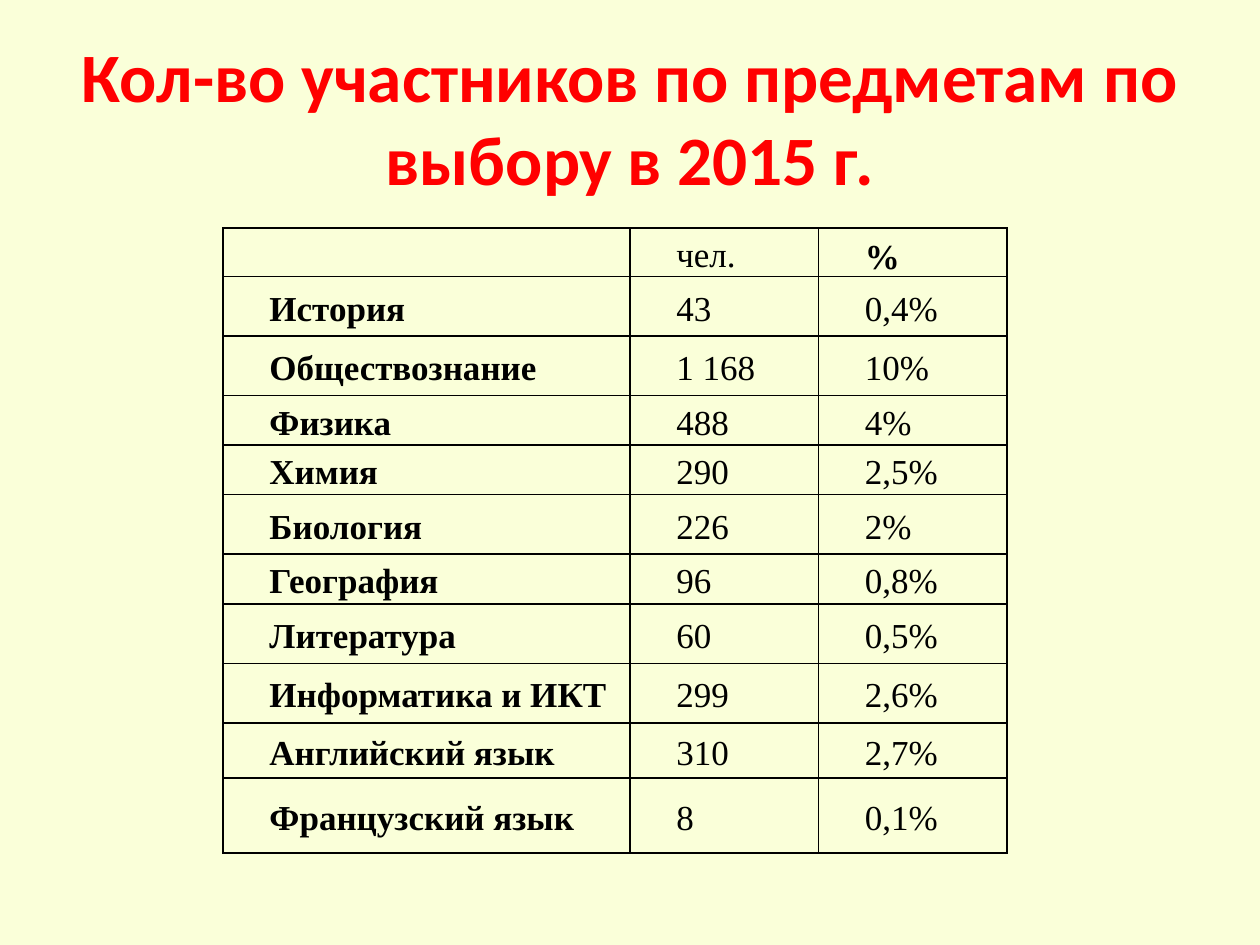
"""Builds a slide with a table of exam participants by elective subject."""
from lxml.etree import SubElement, Element
from pptx import Presentation
from pptx.dml.color import RGBColor
from pptx.enum.text import MSO_ANCHOR as Anchor, PP_ALIGN as Align
from pptx.oxml.ns import qn
from pptx.util import Pt

CREAM = RGBColor(0xFA, 0xFF, 0xD9)
RED = RGBColor(0xFF, 0x00, 0x00)
BLACK = RGBColor(0x00, 0x00, 0x00)

TITLE = "Кол-во участников по предметам по выбору в 2015 г."
COLUMN_WIDTHS = (232.5, 107.75, 107.75)
ROWS = (
    (21.6, "", "чел.", "%"),
    (34, "История", "43", "0,4%"),
    (34, "Обществознание", "1 168", "10%"),
    (28.35, "Физика", "488", "4%"),
    (28.35, "Химия", "290", "2,5%"),
    (34, "Биология", "226", "2%"),
    (28.35, "География", "96", "0,8%"),
    (34, "Литература", "60", "0,5%"),
    (34, "Информатика и ИКТ", "299", "2,6%"),
    (31.5, "Английский язык", "310", "2,7%"),
    (43, "Французский язык", "8", "0,1%"),
)


def set_font(paragraph, name, size, color, bold):
    font = paragraph.font
    font.name, font.size, font.bold = name, Pt(size), bold
    font.color.rgb = color


def add_title(slide):
    frame = slide.shapes.add_textbox(Pt(36), Pt(21.6), Pt(648), Pt(90)).text_frame
    frame.word_wrap = True
    frame.vertical_anchor = Anchor.MIDDLE
    paragraph = frame.paragraphs[0]
    paragraph.text = TITLE
    paragraph.alignment = Align.CENTER
    set_font(paragraph, "Calibri", 39.6, RED, True)


def add_borders(cell):
    properties = cell._tc.get_or_add_tcPr()
    for index, side in enumerate(("lnL", "lnR", "lnT", "lnB")):
        line = Element(qn(f"a:{side}"), w=str(Pt(1)))
        fill = SubElement(line, qn("a:solidFill"))
        SubElement(fill, qn("a:srgbClr"), val=str(BLACK))
        properties.insert(index, line)


def format_cell(cell, text, bold, filled, anchor):
    cell.margin_left = cell.margin_right = Pt(5)
    cell.margin_top = cell.margin_bottom = Pt(0)
    cell.vertical_anchor = anchor
    if filled:
        cell.fill.solid()
        cell.fill.fore_color.rgb = CREAM
    else:
        cell.fill.background()
    add_borders(cell)
    paragraph = cell.text_frame.paragraphs[0]
    paragraph.text = text
    paragraph.alignment = Align.JUSTIFY
    paragraph.line_spacing = 1.15
    paragraph._p.get_or_add_pPr().set("indent", str(Pt(21.6)))
    set_font(paragraph, "Times New Roman", 20, BLACK, bold)


def add_participants_table(slide):
    height = sum(row[0] for row in ROWS)
    table = slide.shapes.add_table(
        len(ROWS), len(COLUMN_WIDTHS), Pt(127.4), Pt(130.4),
        Pt(sum(COLUMN_WIDTHS)), Pt(height)).table
    table.first_row = table.horz_banding = False
    for column, width in zip(table.columns, COLUMN_WIDTHS):
        column.width = Pt(width)
    for row_index, (row_height, *texts) in enumerate(ROWS):
        table.rows[row_index].height = Pt(row_height)
        for column_index, text in enumerate(texts):
            is_percent_header = text == "%"
            format_cell(
                table.cell(row_index, column_index), text,
                bold=column_index == 0 or is_percent_header,
                filled=row_index > 1 and column_index < 2,
                anchor=Anchor.BOTTOM if is_percent_header else Anchor.MIDDLE)


def main():
    presentation = Presentation()
    presentation.slide_width, presentation.slide_height = Pt(720), Pt(540)
    slide = presentation.slides.add_slide(presentation.slide_layouts[6])
    slide.background.fill.solid()
    slide.background.fill.fore_color.rgb = CREAM
    add_title(slide)
    add_participants_table(slide)
    presentation.save("out.pptx")


if __name__ == "__main__":
    main()
